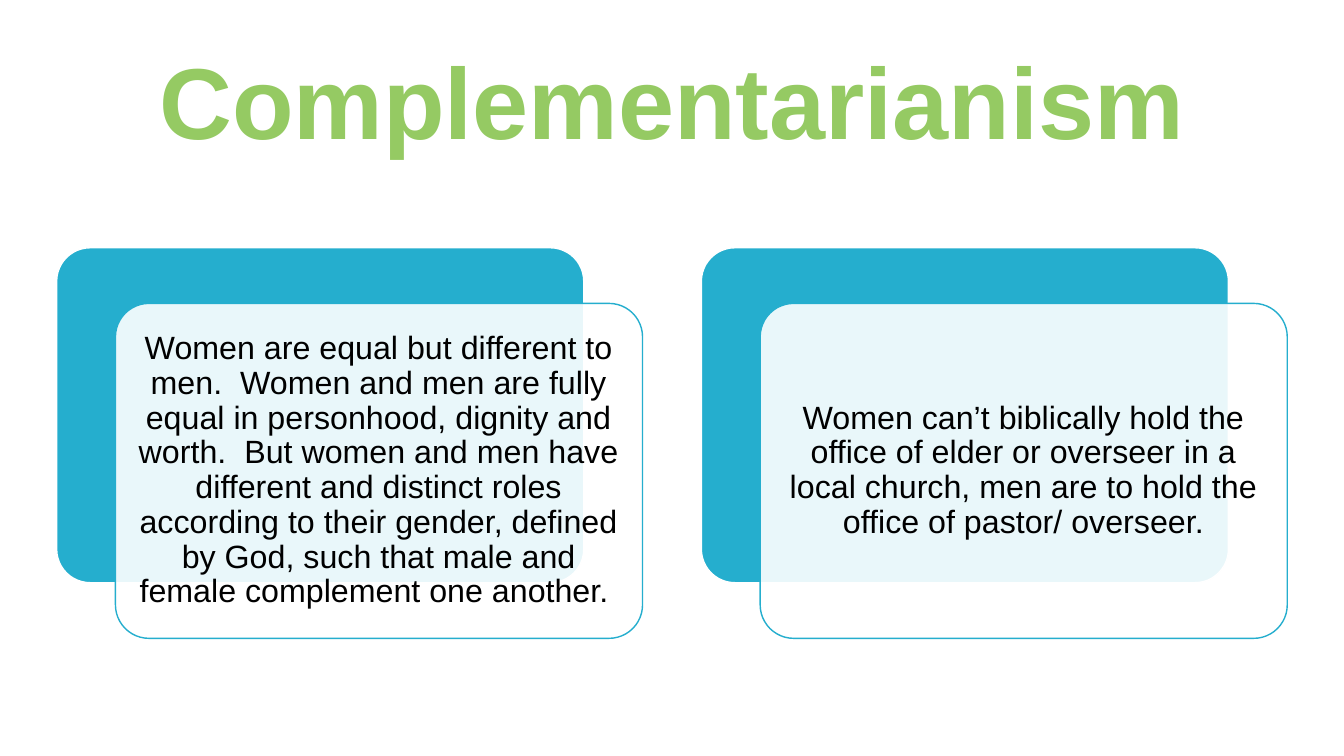
from lxml.etree import SubElement
from pptx import Presentation
from pptx.dml.color import RGBColor
from pptx.enum.shapes import MSO_SHAPE
from pptx.enum.text import MSO_ANCHOR, PP_ALIGN
from pptx.oxml.ns import qn
from pptx.util import Pt

PX = 9525  # EMU, 96 px to the inch
GREEN = RGBColor(0x95, 0xCA, 0x63)
TEAL = RGBColor(0x25, 0xAE, 0xCE)
WHITE = RGBColor(0xFF, 0xFF, 0xFF)
BLACK = RGBColor(0x00, 0x00, 0x00)

CARD_LEFT, CARD_TOP, CARD_W, CARD_H = 54, 236, 558, 372
CARD_PITCH = 614
PANEL_DX, PANEL_DY = 56, 53
STATEMENTS = [
    "Women are equal but different to men.  Women and men are fully equal in "
    "personhood, dignity and worth.  But women and men have different and "
    "distinct roles according to their gender, defined by God, such that male "
    "and female complement one another. ",
    "Women can’t biblically hold the office of elder or overseer in a local "
    "church, men are to hold the office of pastor/ overseer.",
]


def set_text(sp, text, size, color, bold=False):
    tf = sp.text_frame
    tf.text = text
    tf.word_wrap = True
    tf.vertical_anchor = MSO_ANCHOR.MIDDLE
    tf.margin_left = tf.margin_right = tf.margin_top = tf.margin_bottom = 9 * PX
    p = tf.paragraphs[0]
    p.alignment = PP_ALIGN.CENTER
    p.line_spacing = 0.9
    font = p.runs[0].font
    font.name = "Arial"
    font.size = Pt(size)
    font.bold = bold
    font.color.rgb = color


def add_title(s, x, y, w, h):
    sp = s.shapes.add_textbox(x * PX, y * PX, w * PX, h * PX)
    set_text(sp, "Complementarianism", 72, GREEN, bold=True)


def add_rounded(s, x, y, w, h, fill, line):
    sp = s.shapes.add_shape(MSO_SHAPE.ROUNDED_RECTANGLE, x * PX, y * PX, w * PX, h * PX)
    sp.adjustments[0] = 0.1
    sp.shadow.inherit = False
    sp.fill.solid()
    sp.fill.fore_color.rgb = fill
    sp.line.color.rgb = line
    sp.line.width = Pt(1)
    return sp


def add_card(s, x, y, w, h, text):
    """Place a teal block with a translucent text panel shifted down and right."""
    w, h = w - PANEL_DX, h - PANEL_DY
    add_rounded(s, x, y, w, h, TEAL, WHITE)
    panel = add_rounded(s, x + PANEL_DX, y + PANEL_DY, w, h, WHITE, TEAL)
    color = panel.fill._xPr.find(qn("a:solidFill"))[0]
    SubElement(color, qn("a:alpha"), val="90000")
    set_text(panel, text, 23, BLACK)


def main():
    prs = Presentation()
    prs.slide_width, prs.slide_height = 1280 * PX, 720 * PX
    s = prs.slides.add_slide(prs.slide_layouts[6])
    add_title(s, 88, 47, 1104, 109)
    for i, text in enumerate(STATEMENTS):
        add_card(s, CARD_LEFT + i * CARD_PITCH, CARD_TOP, CARD_W, CARD_H, text)
    prs.save("out.pptx")


if __name__ == "__main__":
    main()
